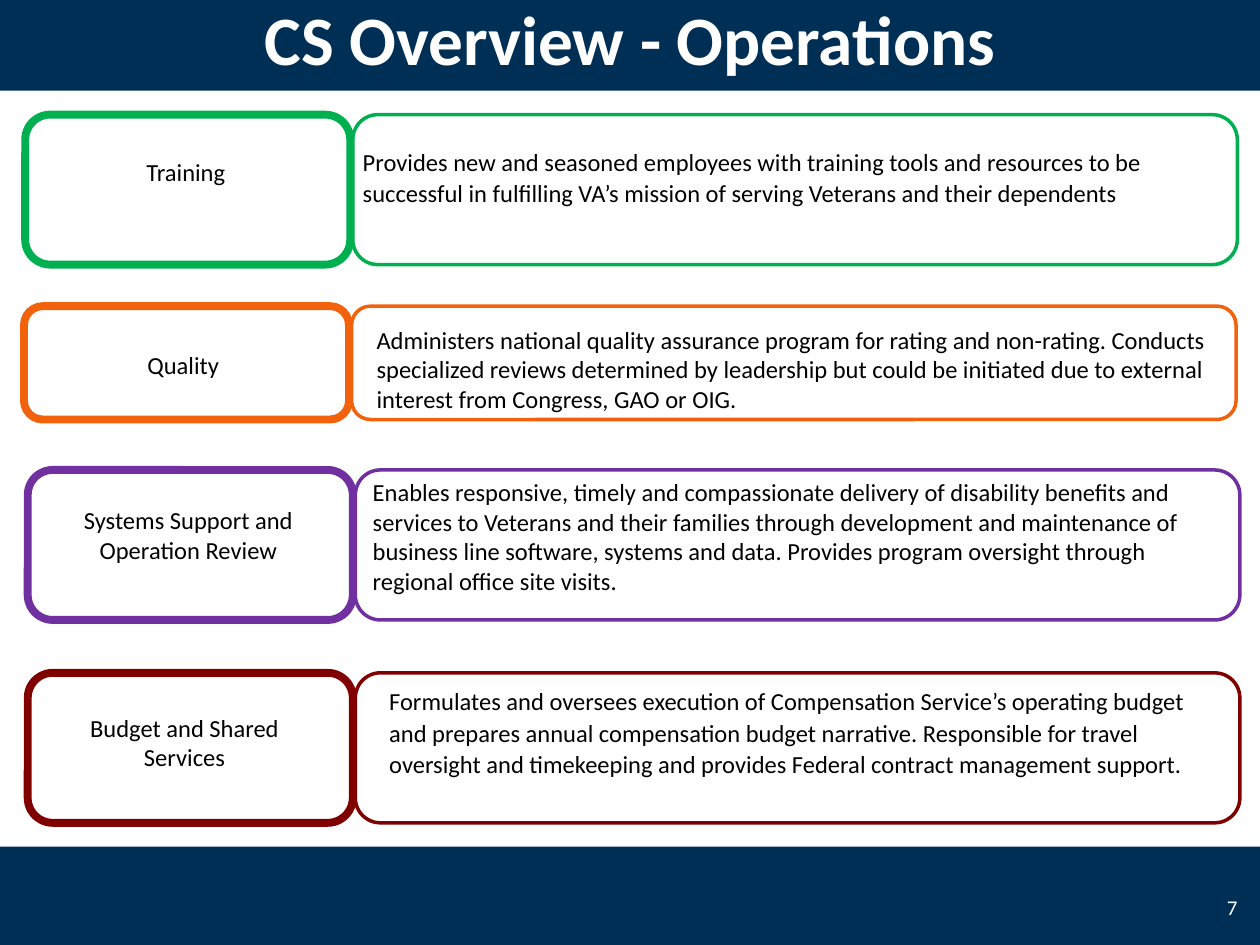
from dataclasses import dataclass

from pptx import Presentation
from pptx import util as u
from pptx.dml.color import RGBColor
from pptx.enum import shapes, text


@dataclass(frozen=True)
class Theme:
    font: str = "Calibri"
    navy: str = "002F56"
    white: str = "FFFFFF"
    black: str = "000000"
    green: str = "00B050"
    orange: str = "F2610C"
    purple: str = "7030A0"
    maroon: str = "800000"
    title_size: float = 39.6
    body_size: float = 14
    number_size: float = 12
    label_line: float = 4.5
    detail_line: float = 2


class SlideBuilder:
    def __init__(self, page, theme):
        self.page = page
        self.theme = theme

    def shape(self, kind, bounds):
        item = self.page.shapes.add_shape(kind, *map(u.Inches, bounds))
        item.shadow.inherit = False
        return item

    def band(self, top, height):
        bar = self.shape(shapes.MSO_SHAPE.RECTANGLE, (0, top, 10, height))
        bar.fill.solid()
        bar.fill.fore_color.rgb = RGBColor.from_string(self.theme.navy)
        bar.line.fill.background()

    def frame(self, bounds, color, weight):
        outline = self.shape(shapes.MSO_SHAPE.ROUNDED_RECTANGLE, bounds)
        outline.fill.background()
        outline.line.color.rgb = RGBColor.from_string(color)
        outline.line.width = u.Pt(weight)

    def text(self, bounds, words, size, color, align=text.PP_ALIGN.LEFT,
             anchor=text.MSO_ANCHOR.TOP, bold=False, spacing=None):
        box = self.page.shapes.add_textbox(*map(u.Inches, bounds)).text_frame
        box.word_wrap = True
        box.vertical_anchor = anchor
        para = box.paragraphs[0]
        para.text = words
        para.alignment = align
        para.line_spacing = spacing
        para.font.name = self.theme.font
        para.font.size = u.Pt(size)
        para.font.bold = bold
        para.font.color.rgb = RGBColor.from_string(color)

    def row(self, color, top, height, left, label, label_at, detail, detail_at, spacing):
        """Draw a heavy label frame and a thin detail frame with their texts."""
        theme = self.theme
        self.frame((left, top, 2.58, height), color, theme.label_line)
        self.frame((left + 2.6, top, 7.02, height), color, theme.detail_line)
        self.text(label_at, label, theme.body_size, theme.black, text.PP_ALIGN.CENTER)
        self.text(detail_at, detail, theme.body_size, theme.black, spacing=spacing)


def main():
    theme = Theme()
    deck = Presentation()
    deck.slide_width, deck.slide_height = u.Inches(10), u.Inches(7.5)
    builder = SlideBuilder(deck.slides.add_slide(deck.slide_layouts[6]), theme)

    builder.band(0, 0.72)
    builder.band(6.72, 0.78)
    builder.text((0, 0, 10, 0.6), "CS Overview - Operations", theme.title_size, theme.white,
                 text.PP_ALIGN.CENTER, text.MSO_ANCHOR.MIDDLE, bold=True)
    builder.text((9.5, 7, 0.42, 0.4), "7", theme.number_size, theme.white,
                 text.PP_ALIGN.RIGHT, text.MSO_ANCHOR.MIDDLE)

    # color, top, height, left, label, label bounds, detail, detail bounds, line spacing
    rows = [
        (theme.green, 0.91, 1.19, 0.2,
         "Training", (0.39, 1.2, 2.17, 0.27),
         "Provides new and seasoned employees with training tools and resources to be "
         "successful in fulfilling VA’s mission of serving Veterans and their dependents",
         (2.78, 1.1, 6.78, 0.69), 1.07),
        (theme.orange, 2.43, 0.9, 0.19,
         "Quality", (0.37, 2.73, 2.17, 0.4),
         "Administers national quality assurance program for rating and non-rating. "
         "Conducts specialized reviews determined by leadership but could be initiated "
         "due to external interest from Congress, GAO or OIG.",
         (2.89, 2.53, 6.78, 0.81), None),
        (theme.purple, 3.73, 1.19, 0.22,
         "Systems Support and Operation Review", (0.2, 3.96, 2.59, 0.81),
         "Enables responsive, timely and compassionate delivery of disability benefits "
         "and services to Veterans and their families through development and maintenance "
         "of business line software, systems and data. Provides program oversight through "
         "regional office site visits.",
         (2.86, 3.74, 6.62, 1.04), None),
        (theme.maroon, 5.34, 1.19, 0.22,
         "Budget and Shared Services", (0.38, 5.61, 2.17, 0.81),
         "Formulates and oversees execution of Compensation Service’s operating budget "
         "and prepares annual compensation budget narrative. Responsible for travel "
         "oversight and timekeeping and provides Federal contract management support.",
         (2.99, 5.38, 6.62, 0.85), 1.07),
    ]
    for row in rows:
        builder.row(*row)

    deck.save("out.pptx")


if __name__ == "__main__":
    main()
